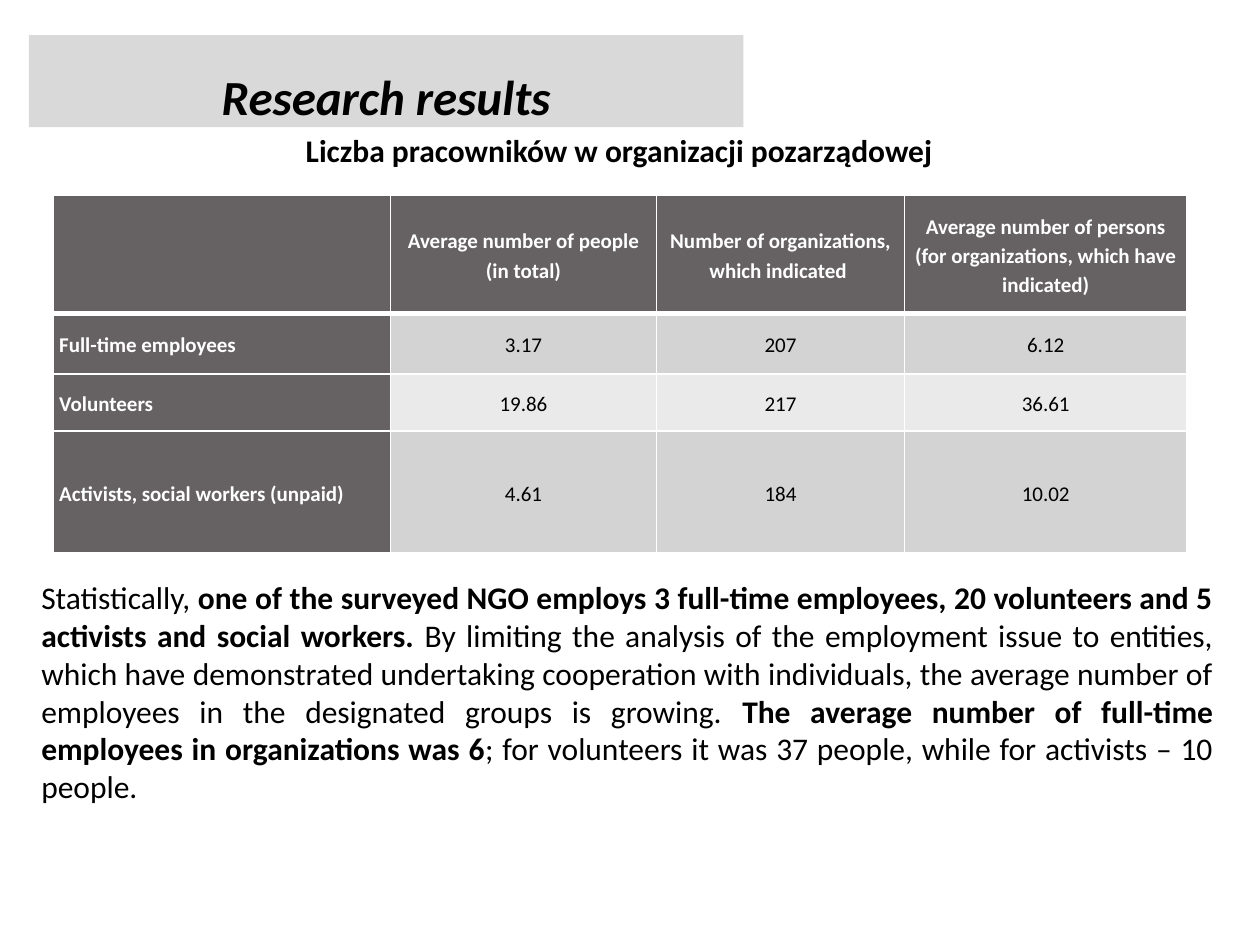
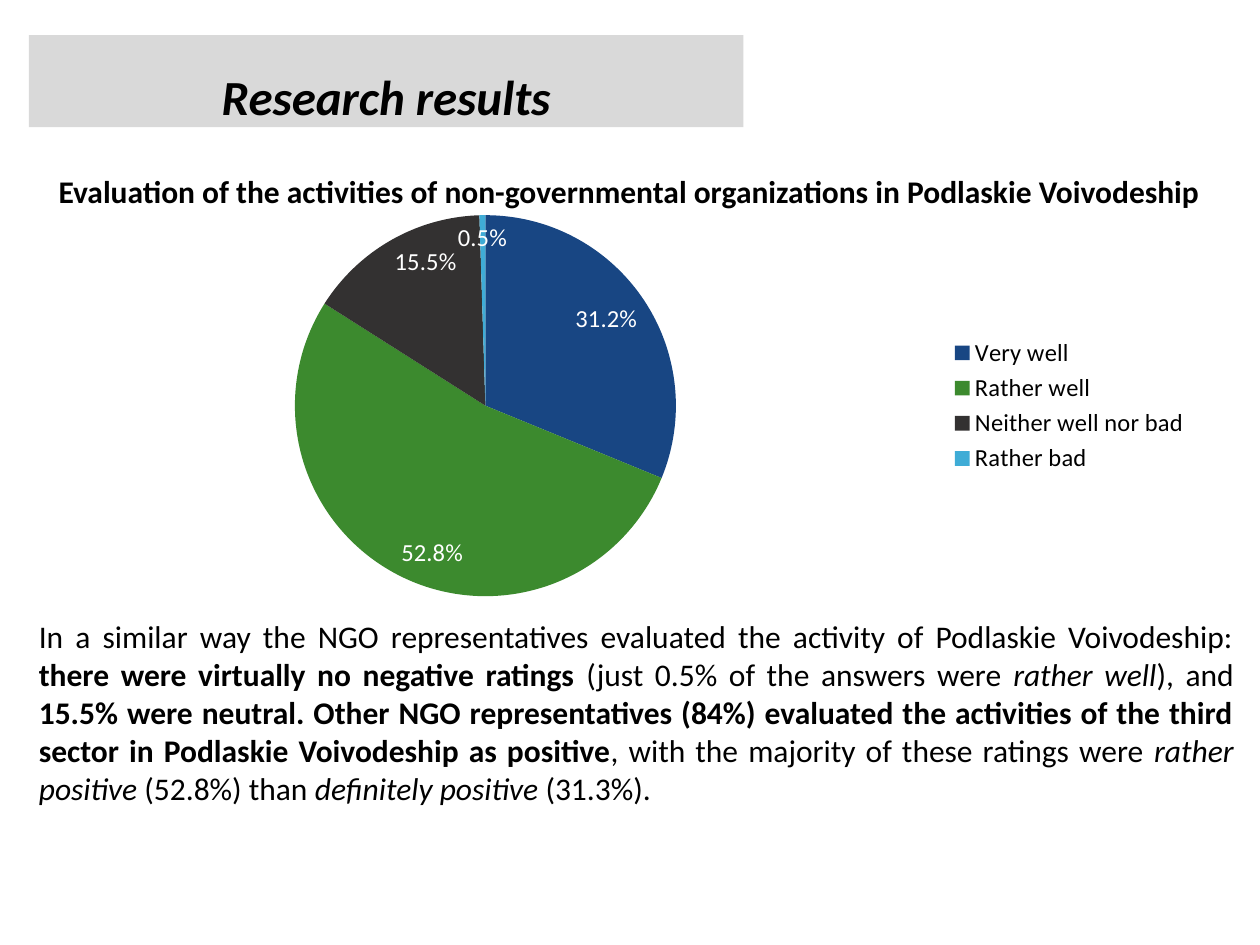
from dataclasses import dataclass

from lxml.etree import SubElement
from pptx import Presentation
from pptx.chart.data import CategoryChartData
from pptx.dml.color import RGBColor
from pptx.enum.chart import XL_CHART_TYPE, XL_LABEL_POSITION, XL_LEGEND_POSITION
from pptx.enum.shapes import MSO_SHAPE
from pptx.enum.text import MSO_ANCHOR, MSO_AUTO_SIZE, PP_ALIGN
from pptx.oxml.ns import qn
from pptx.util import Inches, Pt


@dataclass(frozen=True)
class Theme:
    font: str = "Calibri"
    black: str = "000000"
    white: str = "FFFFFF"
    title_band: str = "D9D9D9"
    table_header: str = "666264"
    table_bands: tuple = ("D3D3D3", "EAEAEA")
    pie_colors: tuple = ("184683", "3C8A2E", "333131", "3FACD6")
    title_size: int = 28
    body_size: int = 18
    chart_size: int = 14
    table_size: int = 12


THEME = Theme()

STAFF_HEADERS = (
    "",
    "Average number of people (in total)",
    "Number of organizations, which indicated ",
    "Average number of persons (for organizations, which have indicated)",
)
STAFF_ROWS = (
    ("Full-time employees", "3.17", "207", "6.12"),
    ("Volunteers", "19.86", "217", "36.61"),
    ("Activists, social workers (unpaid)", "4.61", "184", "10.02"),
)
STAFF_SUMMARY = (
    ("Statistically, ", ""),
    ("one of the surveyed NGO employs 3 full-time employees, 20 volunteers "
     "and 5 activists and social workers.", "bold"),
    (" By limiting the analysis of the employment issue to entities, which have "
     "demonstrated undertaking cooperation with individuals, the average number "
     "of employees in the designated groups is growing. ", ""),
    ("The average number of full-time employees in organizations was 6", "bold"),
    ("; for volunteers it was 37 people, while for activists – 10 people.", ""),
)
RATINGS = {
    "Very well": 0.312,
    "Rather well": 0.528,
    "Neither well nor bad": 0.155,
    "Rather bad": 0.005,
}
RATINGS_SUMMARY = (
    ("In a similar way the NGO representatives evaluated the activity of "
     "Podlaskie Voivodeship: ", ""),
    ("there were virtually no negative ratings ", "bold"),
    ("(just 0.5% of the answers were", ""),
    (" rather well", "italic"),
    ("), and ", ""),
    ("15.5% were neutral. Other NGO representatives (84%) evaluated the activities "
     "of the third sector in Podlaskie Voivodeship as positive", "bold"),
    (", with the majority of these ratings were ", ""),
    ("rather positive ", "italic"),
    ("(52.8%) than", ""),
    (" definitely positive", "italic"),
    (" (31.3%).", ""),
)


def rgb(color):
    return RGBColor.from_string(color)


def format_font(font, size, color=THEME.black, bold=False, italic=False):
    font.name = THEME.font
    font.size = Pt(size)
    font.color.rgb = rgb(color)
    font.bold = bold
    font.italic = italic


def write_text(text_frame, runs, size=THEME.body_size, color=THEME.black,
               align=PP_ALIGN.CENTER, line_spacing=None):
    paragraph = text_frame.paragraphs[0]
    paragraph.alignment = align
    paragraph.line_spacing = line_spacing
    for text, style in runs:
        run = paragraph.add_run()
        run.text = text
        format_font(run.font, size, color, "bold" in style, "italic" in style)


def add_text(slide, left, top, width, height, runs, **text_format):
    box = slide.shapes.add_textbox(
        Inches(left), Inches(top), Inches(width), Inches(height))
    box.text_frame.word_wrap = True
    box.text_frame.auto_size = MSO_AUTO_SIZE.SHAPE_TO_FIT_TEXT
    write_text(box.text_frame, runs, **text_format)


def add_title_band(slide, title):
    band = slide.shapes.add_shape(
        MSO_SHAPE.RECTANGLE, Inches(0.23), Inches(0.28), Inches(5.67), Inches(0.73))
    band.shadow.inherit = False
    band.fill.solid()
    band.fill.fore_color.rgb = rgb(THEME.title_band)
    band.line.fill.background()
    band.text_frame.word_wrap = True
    band.text_frame.auto_size = MSO_AUTO_SIZE.SHAPE_TO_FIT_TEXT
    band.text_frame.vertical_anchor = MSO_ANCHOR.MIDDLE
    write_text(band.text_frame, [(title, "bold italic")],
               size=THEME.title_size, line_spacing=1.5)


def set_cell_borders(cell, **widths):
    properties = cell._tc.get_or_add_tcPr()
    for side in ("L", "R", "T", "B"):
        line = SubElement(properties, qn(f"a:ln{side}"), w=str(Pt(widths.get(side, 1))))
        fill = SubElement(line, qn("a:solidFill"))
        SubElement(fill, qn("a:srgbClr"), val=THEME.white)


def format_cell(cell, text, row, column):
    is_header = row == 0 or column == 0
    if row == 0:
        set_cell_borders(cell, B=3)
    elif row == 1:
        set_cell_borders(cell, T=3)
    else:
        set_cell_borders(cell)
    cell.fill.solid()
    cell.fill.fore_color.rgb = rgb(
        THEME.table_header if is_header else THEME.table_bands[(row - 1) % 2])
    cell.vertical_anchor = MSO_ANCHOR.MIDDLE
    cell.margin_left = cell.margin_right = Inches(0.05)
    cell.margin_top = cell.margin_bottom = 0
    if text:
        write_text(
            cell.text_frame, [(text, "bold" if is_header else "")],
            size=THEME.table_size,
            color=THEME.white if is_header else THEME.black,
            align=PP_ALIGN.JUSTIFY if row and not column else PP_ALIGN.CENTER,
            line_spacing=1.15)


def add_data_table(slide, left, top, column_widths, row_heights, rows):
    table = slide.shapes.add_table(
        len(row_heights), len(column_widths), Inches(left), Inches(top),
        Inches(sum(column_widths)), Inches(sum(row_heights))).table
    for column, width in zip(table.columns, column_widths):
        column.width = Inches(width)
    for table_row, height in zip(table.rows, row_heights):
        table_row.height = Inches(height)
    for row, texts in enumerate(rows):
        for column, text in enumerate(texts):
            format_cell(table.cell(row, column), text, row, column)


def add_pie_chart(slide, left, top, width, height, values):
    data = CategoryChartData(number_format="0.0%")
    data.categories = list(values)
    data.add_series("Series 1", list(values.values()))
    chart = slide.shapes.add_chart(
        XL_CHART_TYPE.PIE, Inches(left), Inches(top), Inches(width), Inches(height),
        data).chart
    format_font(chart.font, THEME.chart_size)
    chart.has_title = False
    chart.has_legend = True
    chart.legend.position = XL_LEGEND_POSITION.RIGHT
    chart.legend.include_in_layout = False
    plot = chart.plots[0]
    plot.vary_by_categories = True
    for index, color in enumerate(THEME.pie_colors):
        fill = plot.series[0].points[index].format.fill
        fill.solid()
        fill.fore_color.rgb = rgb(color)
    plot.has_data_labels = True
    labels = plot.data_labels
    format_font(labels.font, THEME.chart_size, THEME.white)
    labels.show_value = True
    labels.show_percentage = False
    labels.number_format = "0.0%"
    labels.number_format_is_linked = False
    labels.position = XL_LABEL_POSITION.INSIDE_END


def add_results_slide(presentation):
    slide = presentation.slides.add_slide(presentation.slide_layouts[6])
    add_title_band(slide, "Research results")
    return slide


def build_staff_slide(presentation):
    slide = add_results_slide(presentation)
    add_text(slide, 0.35, 0.99, 9.13, 0.4,
             [("Liczba pracowników w organizacji pozarządowej", "bold")])
    add_data_table(slide, 0.42, 1.55, (2.68, 2.11, 1.97, 2.24),
                   (0.94, 0.48, 0.45, 0.97), (STAFF_HEADERS, *STAFF_ROWS))
    add_text(slide, 0.23, 4.54, 9.5, 1.92, STAFF_SUMMARY, align=PP_ALIGN.JUSTIFY)


def build_ratings_slide(presentation):
    slide = add_results_slide(presentation)
    add_text(slide, 0.31, 1.32, 9.37, 0.4,
             [("Evaluation of the activities of non-governmental organizations "
               "in Podlaskie Voivodeship", "bold")])
    add_text(slide, 0.21, 4.85, 9.68, 1.62, RATINGS_SUMMARY, align=PP_ALIGN.JUSTIFY)
    add_pie_chart(slide, 0.19, 1.57, 9.35, 3.3, RATINGS)


def main():
    presentation = Presentation()
    presentation.slide_width = Inches(10)
    presentation.slide_height = Inches(7.5)
    build_staff_slide(presentation)
    build_ratings_slide(presentation)
    presentation.save("out.pptx")


if __name__ == "__main__":
    main()
